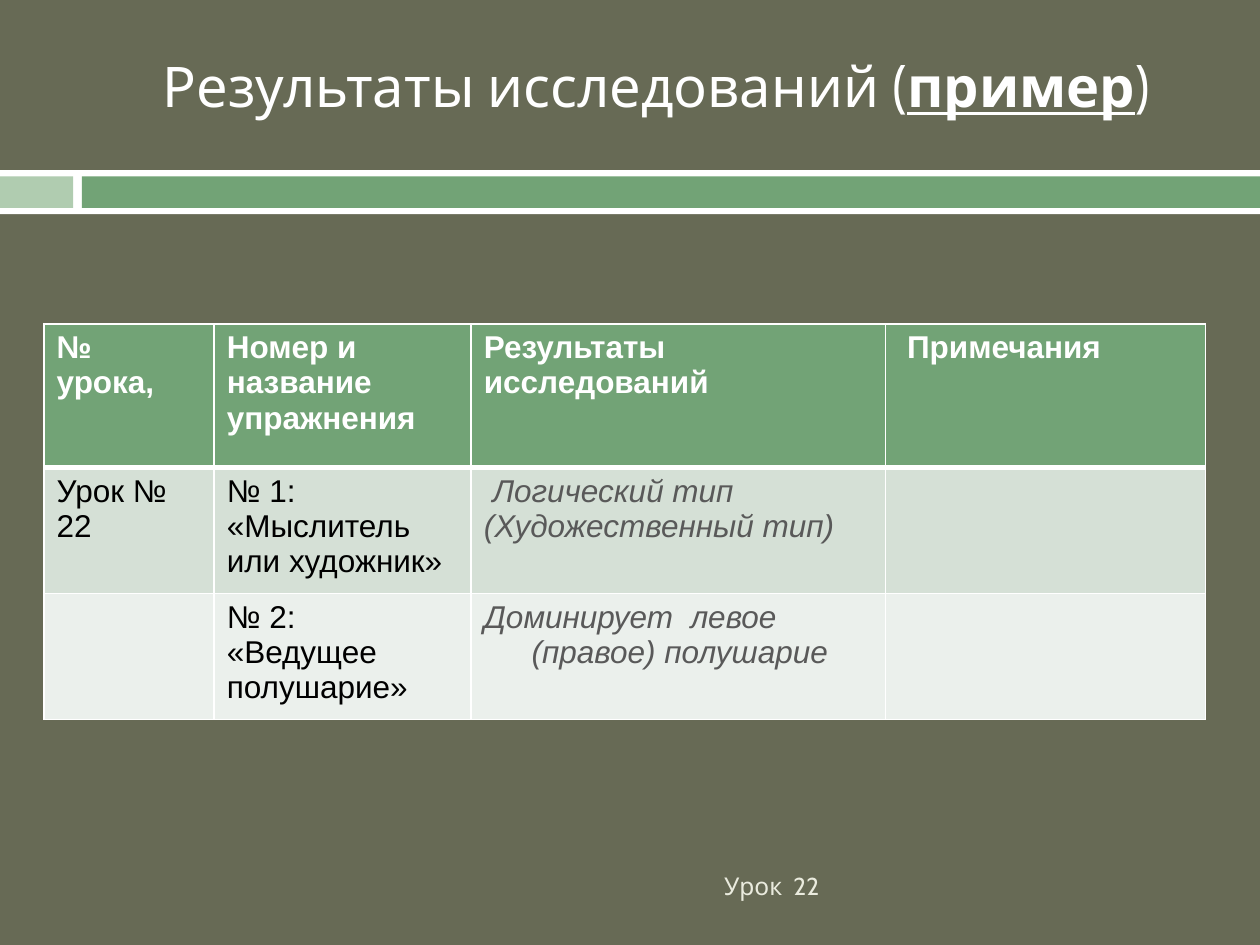
from lxml.etree import SubElement
from pptx import Presentation
from pptx.dml.color import RGBColor
from pptx.enum.shapes import MSO_SHAPE
from pptx.enum.text import MSO_ANCHOR, MSO_AUTO_SIZE, PP_ALIGN
from pptx.oxml.ns import qn
from pptx.util import Inches, Pt

OLIVE = RGBColor(0x67, 0x6A, 0x55)
WHITE = RGBColor(0xFF, 0xFF, 0xFF)
BLACK = RGBColor(0x00, 0x00, 0x00)
GREEN = RGBColor(0x72, 0xA3, 0x76)
LIGHT_GREEN = RGBColor(0xB0, 0xCC, 0xB0)
CREAM = RGBColor(0xEA, 0xEB, 0xDE)
GRAY = RGBColor(0x59, 0x59, 0x59)
ROW_FILLS = [GREEN, RGBColor(0xD5, 0xE0, 0xD6), RGBColor(0xEB, 0xF0, 0xEC)]

COLUMN_WIDTHS = [1.35, 2.04, 3.29, 2.54]
ROW_HEIGHTS = [1.14, 0.91, 0.91]
RESULTS_COLUMN = 2
ROWS = [
    [["№  урока,"], ["Номер и", "название  упражнения"],
     ["Результаты", "исследований"], [" Примечания"]],
    [["Урок № 22"], ["№ 1: «Мыслитель или художник»"],
     [" Логический тип", "(Художественный тип)"], []],
    [[], ["№ 2:", "«Ведущее полушарие»"],
     ["Доминирует  левое (правое) полушарие"], []],
]


def add_text(paragraph, text, font="Arial", size=18, color=BLACK,
             bold=False, italic=False, underline=False):
    run = paragraph.add_run()
    run.text = text
    run.font.name = font
    run.font.size = Pt(size)
    run.font.color.rgb = color
    run.font.bold = bold
    run.font.italic = italic
    run.font.underline = underline


def set_hanging_indent(paragraph, inches):
    properties = paragraph._p.get_or_add_pPr()
    properties.set("marL", str(Inches(inches)))
    properties.set("indent", str(-Inches(inches)))


def add_bar(slide, left, top, width, height, color):
    bar = slide.shapes.add_shape(MSO_SHAPE.RECTANGLE, Inches(left), Inches(top),
                                 Inches(width), Inches(height))
    bar.shadow.inherit = False
    bar.fill.solid()
    bar.fill.fore_color.rgb = color
    bar.line.fill.background()


def add_title(slide):
    title = slide.shapes.title
    title.left, title.top = Inches(0.75), Inches(0.36)
    title.width, title.height = Inches(8.92), Inches(1.14)
    frame = title.text_frame
    frame.auto_size = MSO_AUTO_SIZE.NONE
    frame.vertical_anchor = MSO_ANCHOR.TOP
    heading = frame.paragraphs[0]
    heading.alignment = PP_ALIGN.CENTER
    heading.space_before = Pt(7)
    set_hanging_indent(heading, 0.35)
    for text, emphasis in [("Результаты исследований (", False),
                           ("пример", True), (")", False)]:
        add_text(heading, text, font="Cabin", size=32, color=WHITE,
                 bold=emphasis, underline=emphasis)


def add_footer(slide):
    footer = slide.shapes.add_textbox(Inches(0.67), Inches(6.83),
                                      Inches(5.93), Inches(0.4))
    frame = footer.text_frame
    frame.word_wrap = True
    frame.vertical_anchor = MSO_ANCHOR.MIDDLE
    frame.paragraphs[0].alignment = PP_ALIGN.RIGHT
    add_text(frame.paragraphs[0], "Урок  22", font="Cabin", size=14, color=CREAM)


def set_borders(cell, top, bottom):
    """Draw white cell borders; the side ones are 1 pt wide."""
    properties = cell._tc.get_or_add_tcPr()
    widths = {"a:lnL": 1, "a:lnR": 1, "a:lnT": top, "a:lnB": bottom}
    for position, (tag, width) in enumerate(widths.items()):
        border = SubElement(properties, qn(tag), w=str(Pt(width)))
        fill = SubElement(border, qn("a:solidFill"))
        SubElement(fill, qn("a:srgbClr"), val=str(WHITE))
        properties.insert(position, border)


def fill_cell(cell, lines, row, column):
    is_header = row == 0
    is_result = column == RESULTS_COLUMN and not is_header
    cell.fill.solid()
    cell.fill.fore_color.rgb = ROW_FILLS[row]
    set_borders(cell, top=3 if row == 1 else 1, bottom=3 if is_header else 1)
    color = WHITE if is_header else GRAY if is_result else BLACK
    frame = cell.text_frame
    for index, line in enumerate(lines):
        paragraph = frame.add_paragraph() if index else frame.paragraphs[0]
        if is_result:
            set_hanging_indent(paragraph, 0.38)
        add_text(paragraph, line, color=color, bold=is_header, italic=is_result)


def add_results_table(slide):
    table = slide.shapes.add_table(
        len(ROWS), len(COLUMN_WIDTHS), Inches(0.35), Inches(2.57),
        Inches(sum(COLUMN_WIDTHS)), Inches(sum(ROW_HEIGHTS))).table
    for column, width in zip(table.columns, COLUMN_WIDTHS):
        column.width = Inches(width)
    for row, height in zip(table.rows, ROW_HEIGHTS):
        row.height = Inches(height)
    for row, cells in enumerate(ROWS):
        for column, lines in enumerate(cells):
            fill_cell(table.cell(row, column), lines, row, column)


def main():
    presentation = Presentation()
    presentation.slide_width = Inches(10)
    presentation.slide_height = Inches(7.5)
    slide = presentation.slides.add_slide(presentation.slide_layouts[5])
    slide.background.fill.solid()
    slide.background.fill.fore_color.rgb = OLIVE
    add_bar(slide, 0, 1.35, 10, 0.35, WHITE)
    add_bar(slide, 0, 1.4, 0.58, 0.25, LIGHT_GREEN)
    add_bar(slide, 0.65, 1.4, 9.35, 0.25, GREEN)
    add_footer(slide)
    add_title(slide)
    add_results_table(slide)
    presentation.save("out.pptx")


if __name__ == "__main__":
    main()
